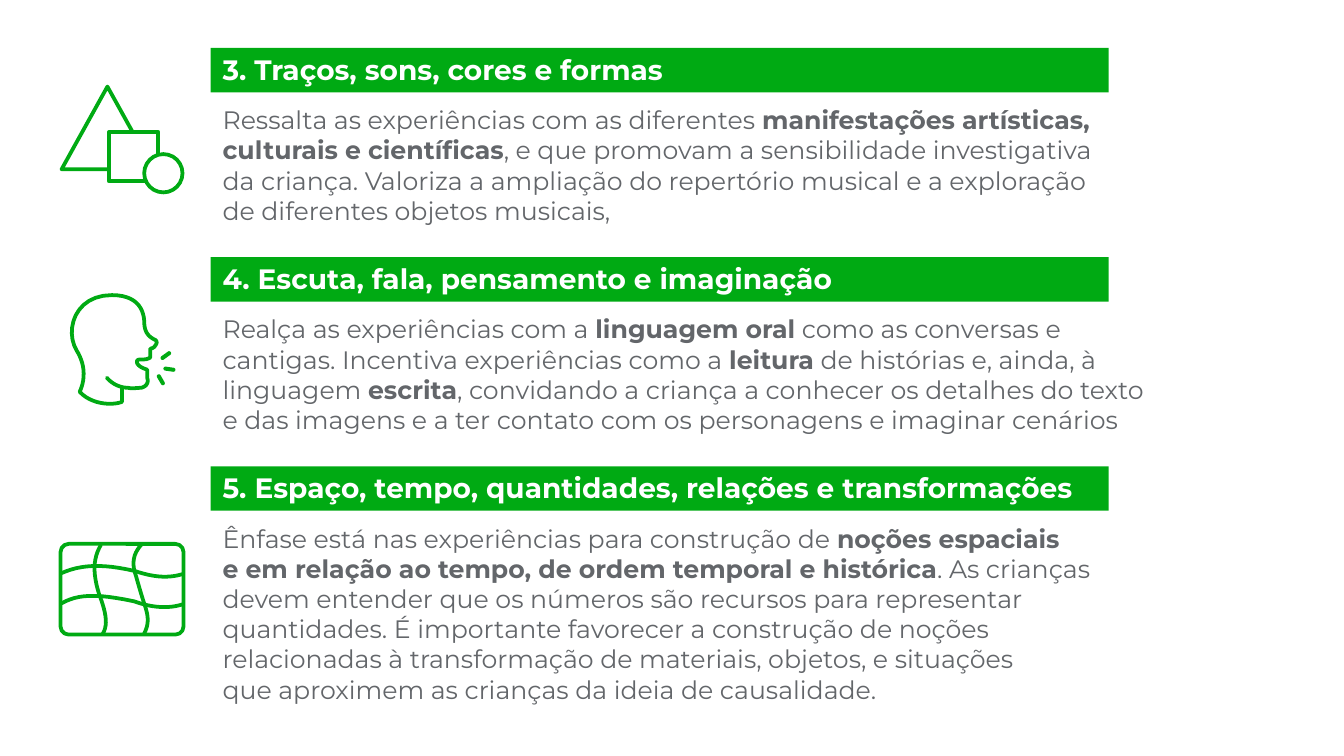
from dataclasses import dataclass

from pptx import Presentation
from pptx import util as u
from pptx.dml.color import RGBColor
from pptx.enum import shapes, text


@dataclass(frozen=True)
class Theme:
    green: RGBColor = RGBColor(0x00, 0xAA, 0x13)
    grey: RGBColor = RGBColor(0x63, 0x66, 0x6A)
    white: RGBColor = RGBColor(0xFF, 0xFF, 0xFF)
    font: str = "Montserrat"
    title_size: u.Length = u.Pt(20)
    body_size: u.Length = u.Pt(18)
    stroke: u.Length = u.Pt(2.7)


THEME = Theme()
KINDS = shapes.MSO_SHAPE
ICON_UNIT = u.Cm(2.54) // 100  # icons are drawn on a grid of this step
CURVE_STEPS = 12

# Each path is a start point followed by lines (x, y) and cubic curves (six numbers).
HEAD = [
    (64, 96), (64, 109), (53, 113, 33, 111, 22, 99), (29, 84, 26, 69, 19, 58),
    (7, 38, 17, 3, 54, 3), (77, 3, 85, 15, 86, 28), (86, 37, 88, 43, 96, 47),
    (99, 48, 99, 51, 97, 53), (96, 55, 94, 56, 92, 56), (92, 65),
    (89, 67, 85, 67, 81, 67), (78, 67, 76, 73, 89, 77), (89, 79, 89, 82, 89, 85),
    (91, 91, 87, 94, 83, 95), (79, 95, 74, 96, 70, 95), (61, 95, 53, 90, 49, 85),
]
RAY_LENGTH, RAY_WIDTH = 12, 4
VOICE_RAYS = [(107.5, 63, -36), (111, 76.5, 8), (102.5, 87, 60)]  # centre and angle
GRID_CURVES = [
    [(43, 4), (35, 18, 35, 32, 41, 52), (47, 68, 51, 82, 45, 92)],
    [(83, 4), (74, 14, 74, 24, 78, 35), (81, 46, 84, 56, 87, 65), (91, 77, 90, 84, 86, 92)],
    [(4, 32), (22, 24, 43, 22, 77, 30), (92, 35, 108, 38, 124, 33)],
    [(4, 62), (20, 53, 38, 52, 76, 60), (95, 67, 112, 67, 124, 63)],
]


def style_font(font, size, color, bold):
    font.name, font.size, font.bold = THEME.font, size, bold
    font.color.rgb = color


def style_solid(sp, color):
    """Fill with one colour, without outline or shadow."""
    sp.shadow.inherit = False
    sp.fill.solid()
    sp.fill.fore_color.rgb = color
    sp.line.fill.background()


def style_stroke(sp):
    sp.line.color.rgb = THEME.green
    sp.line.width = THEME.stroke
    sp.line._get_or_add_ln().set("cap", "rnd")


def add_icon_shape(slide, x, y, kind, box):
    """Place a preset shape; box is in icon units from (x, y)."""
    left, top, width, height = (round(n * ICON_UNIT) for n in box)
    return slide.shapes.add_shape(kind, x + left, y + top, width, height)


def add_outlined_shape(slide, x, y, kind, box):
    sp = add_icon_shape(slide, x, y, kind, box)
    style_solid(sp, THEME.white)
    style_stroke(sp)
    return sp


def flatten(path):
    """Turn lines and cubic curves into a list of points."""
    points = [path[0]]
    for seg in path[1:]:
        if len(seg) == 2:
            points.append(seg)
            continue
        x0, y0 = points[-1]
        x1, y1, x2, y2, x3, y3 = seg
        for i in range(1, CURVE_STEPS + 1):
            t = i / CURVE_STEPS
            a, b, c, d = (1 - t) ** 3, 3 * t * (1 - t) ** 2, 3 * t * t * (1 - t), t ** 3
            points.append((a * x0 + b * x1 + c * x2 + d * x3,
                           a * y0 + b * y1 + c * y2 + d * y3))
    return points


def add_icon_path(slide, x, y, path):
    points = [(px * ICON_UNIT, py * ICON_UNIT) for px, py in flatten(path)]
    builder = slide.shapes.build_freeform(*points[0])
    builder.add_line_segments(points[1:], close=False)
    sp = builder.convert_to_shape(x, y)
    sp.shadow.inherit = False
    sp.fill.background()
    style_stroke(sp)


def draw_shapes_icon(slide, x, y):
    add_outlined_shape(slide, x, y, KINDS.ISOSCELES_TRIANGLE, (4, 4, 91, 82))
    add_outlined_shape(slide, x, y, KINDS.RECTANGLE, (51, 49, 49, 49))
    add_outlined_shape(slide, x, y, KINDS.OVAL, (86, 71, 38, 38))


def draw_voice_icon(slide, x, y):
    add_icon_path(slide, x, y, HEAD)
    for cx, cy, angle in VOICE_RAYS:
        box = (cx - RAY_LENGTH / 2, cy - RAY_WIDTH / 2, RAY_LENGTH, RAY_WIDTH)
        ray = add_icon_shape(slide, x, y, KINDS.ROUNDED_RECTANGLE, box)
        ray.adjustments[0] = 0.5
        ray.rotation = angle
        style_solid(ray, THEME.green)


def draw_grid_icon(slide, x, y):
    frame = add_outlined_shape(slide, x, y, KINDS.ROUNDED_RECTANGLE, (3, 3, 122, 90))
    frame.adjustments[0] = 0.09
    for curve in GRID_CURVES:
        add_icon_path(slide, x, y, curve)


def add_bar(slide, x, y, width, height):
    style_solid(slide.shapes.add_shape(KINDS.RECTANGLE, x, y, width, height), THEME.green)


def add_title(slide, x, y, width, height, title):
    tf = slide.shapes.add_textbox(x, y, width, height).text_frame
    tf.word_wrap = True
    tf.vertical_anchor = text.MSO_ANCHOR.BOTTOM
    tf.text = title
    style_font(tf.paragraphs[0].runs[0].font, THEME.title_size, THEME.white, True)


def add_body(slide, x, y, width, height, body):
    """Write body text, where ** switches bold and a newline breaks the line."""
    tf = slide.shapes.add_textbox(x, y, width, height).text_frame
    tf.word_wrap = True
    p = tf.paragraphs[0]
    for i, part in enumerate(body.split("**")):
        for j, line in enumerate(part.split("\n")):
            if j:
                p.add_line_break()
            r = p.add_run()
            r.text = line
            style_font(r.font, THEME.body_size, THEME.grey, i % 2 == 1)


def add_section(slide, x, y, section):
    title, title_width, body, body_width, body_height, draw_icon, icon_drop = section
    text_x = x + u.Cm(3.91)
    draw_icon(slide, x, y + u.Cm(icon_drop))
    add_bar(slide, x + u.Cm(3.86), y, u.Cm(22.63), u.Cm(1.12))
    add_title(slide, text_x, y - u.Cm(0.02), u.Cm(title_width), u.Cm(1.11), title)
    add_body(slide, text_x, y + u.Cm(1.3), u.Cm(body_width), u.Cm(body_height), body)


SECTIONS = [
    ("3. Traços, sons, cores e formas", 16.33,
     "Ressalta as experiências com as diferentes **manifestações artísticas, culturais e "
     "científicas**, e que promovam a sensibilidade investigativa\nda criança. Valoriza a "
     "ampliação do repertório musical e a exploração\nde diferentes objetos musicais,",
     24.3, 3.33, draw_shapes_icon, 0.87),
    ("4. Escuta, fala, pensamento e imaginação", 17.83,
     "Realça as experiências com a **linguagem oral** como as conversas e cantigas. Incentiva "
     "experiências como a **leitura** de histórias e, ainda, à linguagem **escrita**, "
     "convidando a criança a conhecer os detalhes do texto\ne das imagens e a ter contato "
     "com os personagens e imaginar cenários",
     24.3, 3.33, draw_voice_icon, 0.88),
    ("5. Espaço, tempo, quantidades, relações e transformações", 26.09,
     "Ênfase está nas experiências para construção de **noções espaciais\ne em relação ao "
     "tempo, de ordem temporal e histórica**. As crianças devem entender que os números são "
     "recursos para representar quantidades. É importante favorecer a construção de noções "
     "relacionadas à transformação de materiais, objetos, e situações\nque aproximem as "
     "crianças da ideia de causalidade.",
     23.14, 4.88, draw_grid_icon, 1.88),
]


def main():
    prs = Presentation()
    prs.slide_width, prs.slide_height = u.Cm(33.87), u.Cm(19.05)
    slide = prs.slides.add_slide(prs.slide_layouts[6])
    for i, section in enumerate(SECTIONS):
        add_section(slide, u.Cm(1.45), u.Cm(1.21 + i * 5.27), section)
    prs.save("out.pptx")


if __name__ == "__main__":
    main()
